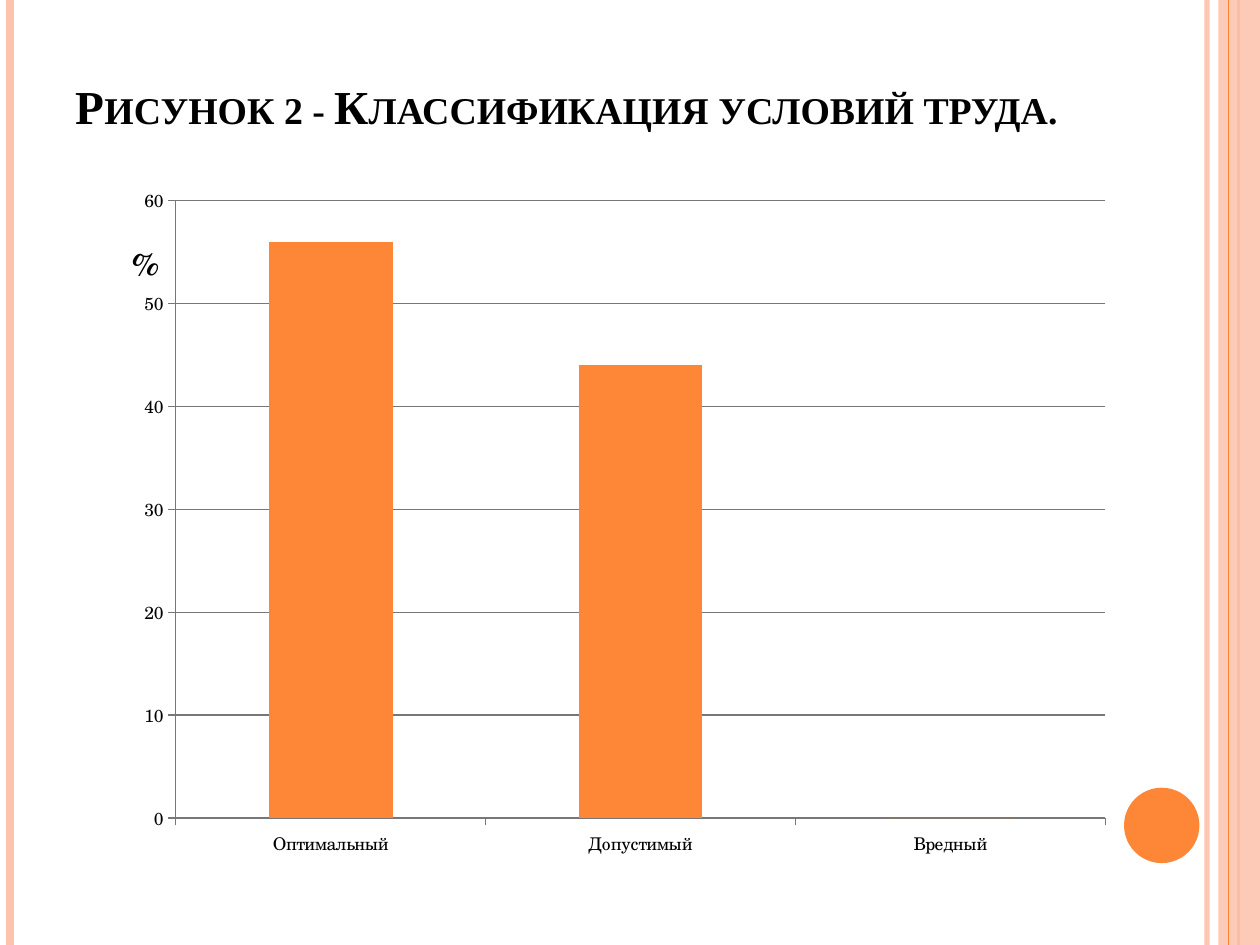
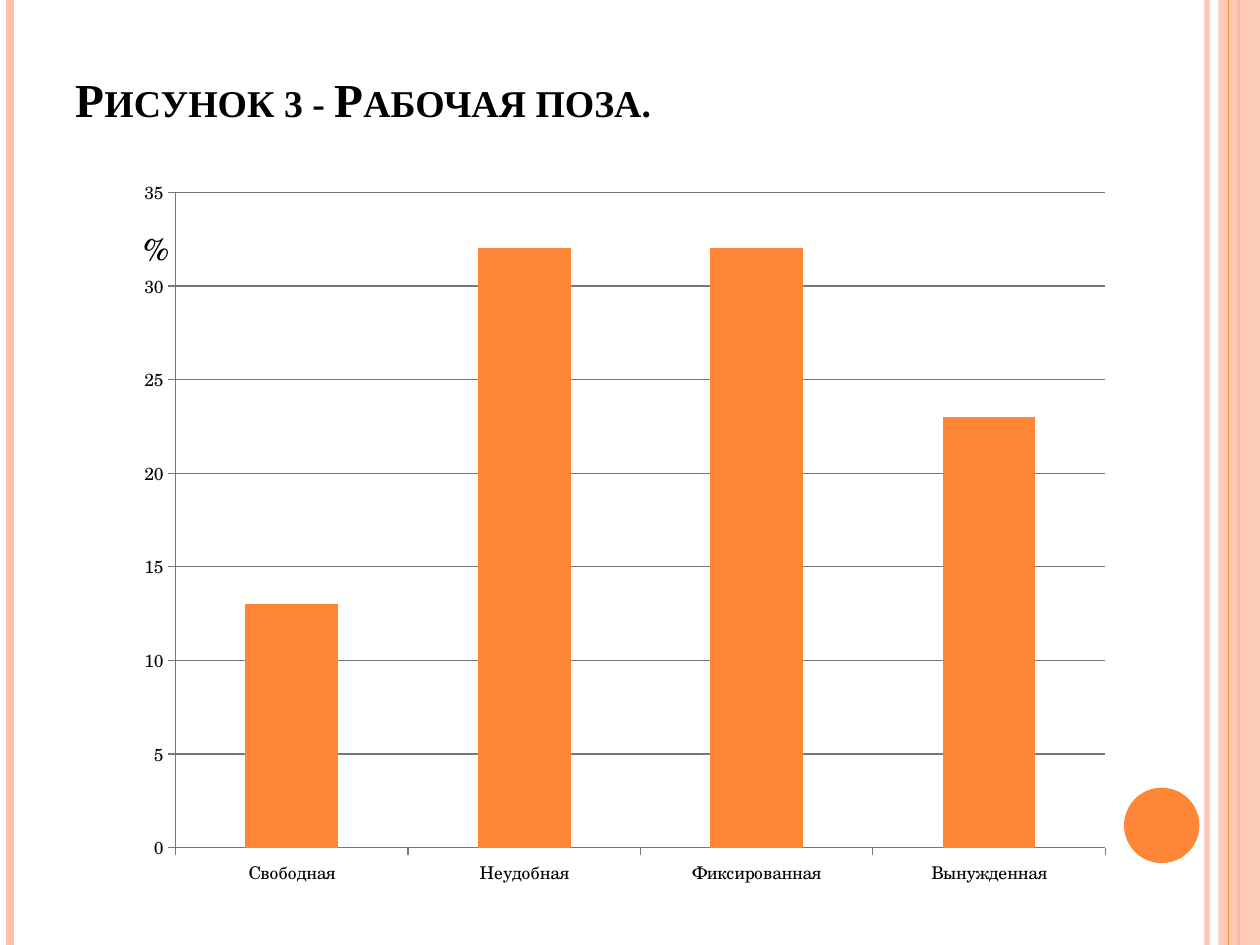
from dataclasses import dataclass

from lxml.etree import SubElement
from pptx import Presentation
from pptx.chart.data import CategoryChartData
from pptx.dml.color import RGBColor
from pptx.enum.chart import XL_CHART_TYPE, XL_TICK_MARK
from pptx.enum.shapes import MSO_CONNECTOR, MSO_SHAPE
from pptx.enum.text import MSO_ANCHOR, MSO_AUTO_SIZE, PP_ALIGN
from pptx.oxml.ns import qn
from pptx.util import Cm, Pt

WIDE, HIGH = 25.4, 19.05


@dataclass(frozen=True)
class Theme:
    ink: str = "000000"
    grid: str = "777777"
    bar: str = "FE8637"
    pale: str = "FEC3AE"
    head: str = "Times New Roman"
    body: str = "TeX Gyre Schola"
    big: int = 27
    mid: int = 18
    tiny: int = 10


def tint(fill, color, alpha=100):
    fill.solid()
    fill.fore_color.rgb = RGBColor.from_string(color)
    if alpha < 100:
        node = fill.fore_color._xFill.find(qn("a:srgbClr"))
        SubElement(node, qn("a:alpha")).set("val", str(alpha * 1000))


def write(frame, text, font, size, color, bold=False, caps=False):
    line = frame.paragraphs[0]
    line.alignment = PP_ALIGN.LEFT
    run = line.add_run()
    run.text = text
    run.font.name = font
    run.font.size = Pt(size)
    run.font.bold = bold
    run.font.color.rgb = RGBColor.from_string(color)
    if caps:
        run.font._element.set("cap", "small")


def place(node, spot, index, inner=False):
    old = node.find(qn("c:layout"))
    if old is not None:
        node.remove(old)
    layout = SubElement(node, qn("c:layout"))
    node.insert(index, layout)
    manual = SubElement(layout, qn("c:manualLayout"))
    if inner:
        SubElement(manual, qn("c:layoutTarget")).set("val", "inner")
    for mode in ("xMode", "yMode"):
        SubElement(manual, qn(f"c:{mode}")).set("val", "edge")
    for key, part in zip("xywh", spot):
        SubElement(manual, qn(f"c:{key}")).set("val", str(part / 100))


class Deck:
    def __init__(self, theme):
        self.theme = theme
        self.file = Presentation()
        self.file.slide_width, self.file.slide_height = Cm(WIDE), Cm(HIGH)
        self.slide = None

    def start(self):
        self.slide = self.file.slides.add_slide(self.file.slide_layouts[5])
        look = self.theme
        self.rule(24.33, look.pale, 3, 93)
        self.rule(0.2, look.pale, 4.5)
        self.rule(24.97, look.bar, 1.5)
        self.shape(MSO_SHAPE.RECTANGLE, (24.56, 0, 0.84, HIGH), look.pale, 87)
        self.rule(24.76, look.bar, 0.75)
        self.shape(MSO_SHAPE.OVAL, (22.66, 15.88, 1.52, 1.52), look.bar)

    def rule(self, left, color, width, alpha=100):
        line = self.slide.shapes.add_connector(
            MSO_CONNECTOR.STRAIGHT, Cm(left), Cm(0), Cm(left), Cm(HIGH))
        line.line.width = Pt(width)
        tint(line.line.fill, color, alpha)
        SubElement(line.element.spPr, qn("a:effectLst"))

    def shape(self, kind, box, color, alpha=100):
        item = self.slide.shapes.add_shape(kind, *map(Cm, box))
        item.shadow.inherit = False
        item.line.fill.background()
        tint(item.fill, color, alpha)

    def title(self, text, base):
        item = self.slide.shapes.title
        item.left, item.top, item.width, item.height = map(
            Cm, (1.27, 0.76, 20.75, 3.18))
        frame = item.text_frame
        frame.word_wrap = True
        frame.auto_size = MSO_AUTO_SIZE.NONE
        frame.vertical_anchor = MSO_ANCHOR.BOTTOM
        frame.margin_bottom = Cm(base)
        look = self.theme
        write(frame, text, font=look.head, size=look.big, color=look.ink,
              bold=True, caps=True)

    def chart(self, data, top, height, plot, unit, bold, limit, step):
        look = self.theme
        feed = CategoryChartData()
        feed.categories = list(data)
        feed.add_series("Series 1", list(data.values()))
        chart = self.slide.shapes.add_chart(
            XL_CHART_TYPE.COLUMN_STACKED, Cm(1.27), Cm(top), Cm(21.44),
            Cm(height), feed).chart
        chart.has_legend = chart.has_title = False
        chart.font.name = look.body
        chart.font.size = Pt(look.tiny)
        chart.font.color.rgb = RGBColor.from_string(look.ink)
        bars = chart.plots[0]
        bars.gap_width, bars.overlap = 150, 100
        bars.vary_by_categories = False
        tint(bars.series[0].format.fill, look.bar)
        side = chart.value_axis
        side.minimum_scale, side.maximum_scale = 0, limit
        side.major_unit = step
        side.has_major_gridlines = True
        for axis in (chart.category_axis, side):
            axis.major_tick_mark = XL_TICK_MARK.OUTSIDE
            axis.minor_tick_mark = XL_TICK_MARK.NONE
        for part in (chart.category_axis, side, side.major_gridlines):
            part.format.line.width = Pt(0.75)
            tint(part.format.line.fill, look.grid)
        name = side.axis_title
        write(name.text_frame, "%", font=look.body, size=look.mid,
              color=look.ink, bold=bold)
        turn = name.element.find(".//" + qn("a:bodyPr"))
        turn.set("rot", "0")
        turn.set("vert", "horz")
        place(name.element, unit, 1)
        area = chart.element.find(".//" + qn("c:plotArea"))
        place(area, plot, 0, inner=True)


def main():
    deck = Deck(Theme())
    deck.start()
    deck.title("Рисунок 2 - Классификация условий труда.", base=1.24)
    deck.chart({"Оптимальный": 56, "Допустимый": 44, "Вредный": 0},
               top=3.53, height=14, plot=(10.6, 3.7, 87.4, 88.9),
               unit=(6, 8), bold=True, limit=60, step=10)
    deck.start()
    deck.title("Рисунок 3 - Рабочая поза.", base=1.37)
    deck.chart({"Свободная": 13, "Неудобная": 32, "Фиксированная": 32,
                "Вынужденная": 23},
               top=3.33, height=14.81, plot=(10.6, 3.7, 87.4, 89.2),
               unit=(7, 7), bold=False, limit=35, step=5)
    deck.file.save("out.pptx")


if __name__ == "__main__":
    main()
